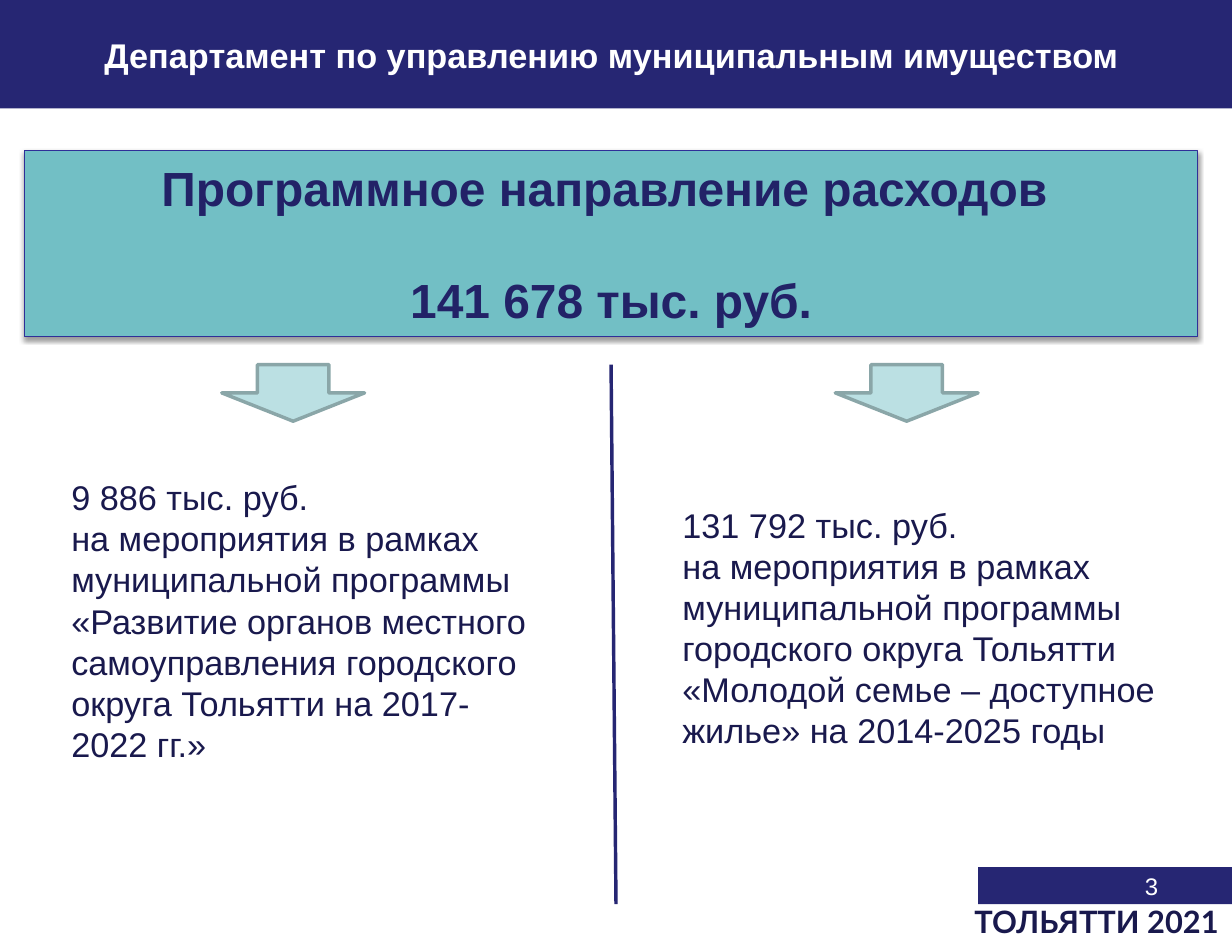
from dataclasses import dataclass

import lxml.etree
import pptx
import pptx.dml.color
import pptx.enum.shapes
import pptx.enum.text
import pptx.oxml.ns
import pptx.shapes.autoshape
import pptx.util

Inches = pptx.util.Inches
Pt = pptx.util.Pt
RGBColor = pptx.dml.color.RGBColor
Shape = pptx.shapes.autoshape.Shape
Kind = pptx.enum.shapes.MSO_SHAPE
Align = pptx.enum.text.PP_ALIGN
Anchor = pptx.enum.text.MSO_ANCHOR
qn = pptx.oxml.ns.qn

NAVY = RGBColor(0x26, 0x26, 0x73)
INK = RGBColor(0x19, 0x19, 0x4D)
DEEP = RGBColor(0x22, 0x22, 0x67)
TEAL = RGBColor(0x72, 0xBF, 0xC5)
EDGE = RGBColor(0x2F, 0x2F, 0x98)
PALE = RGBColor(0xBB, 0xE0, 0xE3)
GREY = RGBColor(0x8A, 0xA6, 0xA8)
WHITE = RGBColor(0xFF, 0xFF, 0xFF)


@dataclass
class Box:
    left: float
    top: float
    width: float
    height: float

    def lengths(self) -> list[int]:
        return [Inches(n) for n in (self.left, self.top, self.width, self.height)]


@dataclass
class Column:
    text: Box
    arrow: Box
    inset: float
    lines: list[str]


COLUMNS = [
    Column(
        Box(0.48, 3.82, 4.05, 2.63),
        Box(1.8, 2.96, 1.16, 0.46),
        0.05,
        [
            "9 886 тыс. руб.",
            "на мероприятия в рамках муниципальной программы «Развитие органов "
            "местного самоуправления городского округа Тольятти на 2017-2022 гг.»",
        ],
    ),
    Column(
        Box(5.44, 3.82, 4.05, 2.59),
        Box(6.78, 2.96, 1.16, 0.46),
        0.27,
        [
            "131 792 тыс. руб.",
            "на мероприятия в рамках муниципальной программы городского округа "
            "Тольятти «Молодой семье – доступное жилье» на 2014-2025 годы",
        ],
    ),
]


def write(shape: Shape, lines: list[str], *, size: float, color: RGBColor,
          font: str = "Arial", bold: bool = False, align: Align = Align.LEFT,
          anchor: Anchor = Anchor.TOP, space: float = 1, gap: float = 0,
          inset: tuple = (0.1, 0.05, 0.1, 0.05)) -> None:
    frame = shape.text_frame
    frame.word_wrap = True
    frame.auto_size = pptx.enum.text.MSO_AUTO_SIZE.NONE
    frame.vertical_anchor = anchor
    (frame.margin_left, frame.margin_top,
     frame.margin_right, frame.margin_bottom) = [Inches(n) for n in inset]
    for i, line in enumerate(lines):
        para = frame.paragraphs[0] if i == 0 else frame.add_paragraph()
        para.alignment = align
        para.line_spacing = space
        para.space_before = Pt(gap if i else 0)
        run = para.add_run()
        run.text = line
        run.font.name = font
        run.font.size = Pt(size)
        run.font.bold = bold
        run.font.color.rgb = color


def draw(slide: pptx.slide.Slide, kind: Kind, box: Box, fill: RGBColor,
         edge: RGBColor | None = None, weight: float = 0) -> Shape:
    shape = slide.shapes.add_shape(kind, *box.lengths())
    shape.shadow.inherit = False
    shape.fill.solid()
    shape.fill.fore_color.rgb = fill
    if edge is None:
        shape.line.fill.background()
    else:
        shape.line.color.rgb = edge
        shape.line.width = Pt(weight)
    return shape


def label(slide: pptx.slide.Slide, box: Box, lines: list[str], **style) -> None:
    write(slide.shapes.add_textbox(*box.lengths()), lines, **style)


def shade(shape: Shape) -> None:
    effects = shape._element.spPr.find(qn("a:effectLst"))
    outer = lxml.etree.SubElement(
        effects, qn("a:outerShdw"), blurRad=str(Pt(3.1)), dist=str(Pt(1.6)),
        dir="5400000", rotWithShape="0")
    tint = lxml.etree.SubElement(outer, qn("a:srgbClr"), val="000000")
    lxml.etree.SubElement(tint, qn("a:alpha"), val="38000")


def split(slide: pptx.slide.Slide) -> None:
    line = slide.shapes.add_connector(
        pptx.enum.shapes.MSO_CONNECTOR.STRAIGHT,
        Inches(4.96), Inches(2.96), Inches(5), Inches(7.34))
    line.line.color.rgb = NAVY
    line.line.width = Pt(2)
    lxml.etree.SubElement(line._element.spPr, qn("a:effectLst"))


def main() -> None:
    deck = pptx.Presentation()
    deck.slide_width = Inches(10)
    deck.slide_height = Inches(7.72)
    slide = deck.slides.add_slide(deck.slide_layouts[5])

    title = slide.shapes.title
    title.left, title.top, title.width, title.height = Box(0, 0, 10, 0.88).lengths()
    title.fill.solid()
    title.fill.fore_color.rgb = NAVY
    write(title, ["Департамент по управлению муниципальным имуществом"],
          size=20, color=WHITE, bold=True, align=Align.CENTER,
          anchor=Anchor.MIDDLE, space=0.8, inset=(0.2, 0.12, 0.27, 0.05))

    draw(slide, Kind.RECTANGLE, Box(7.94, 7.04, 2.06, 0.3), NAVY)
    label(slide, Box(7.17, 7.03, 2.33, 0.54), ["3"],
          size=14, color=WHITE, align=Align.RIGHT)
    label(slide, Box(7.81, 7.34, 2.21, 0.35), ["ТОЛЬЯТТИ 2021"],
          size=18, color=INK, font="Lato", bold=True, space=0.8)

    banner = draw(slide, Kind.RECTANGLE, Box(0.2, 1.22, 9.52, 1.51), TEAL, EDGE, 0.75)
    shade(banner)
    write(banner, ["Программное направление расходов", "141 678 тыс. руб."],
          size=28, color=DEEP, bold=True, align=Align.CENTER,
          anchor=Anchor.MIDDLE, gap=32)
    for para, side in zip(banner.text_frame.paragraphs, ("marR", "marL")):
        para._p.get_or_add_pPr().set(side, str(Inches(0.11)))

    split(slide)
    for col in COLUMNS:
        label(slide, col.text, col.lines, size=20, color=INK,
              inset=(0.1, col.inset, 0.1, 0.05))
        draw(slide, Kind.DOWN_ARROW, col.arrow, PALE, GREY, 2)

    deck.save("out.pptx")


if __name__ == "__main__":
    main()
